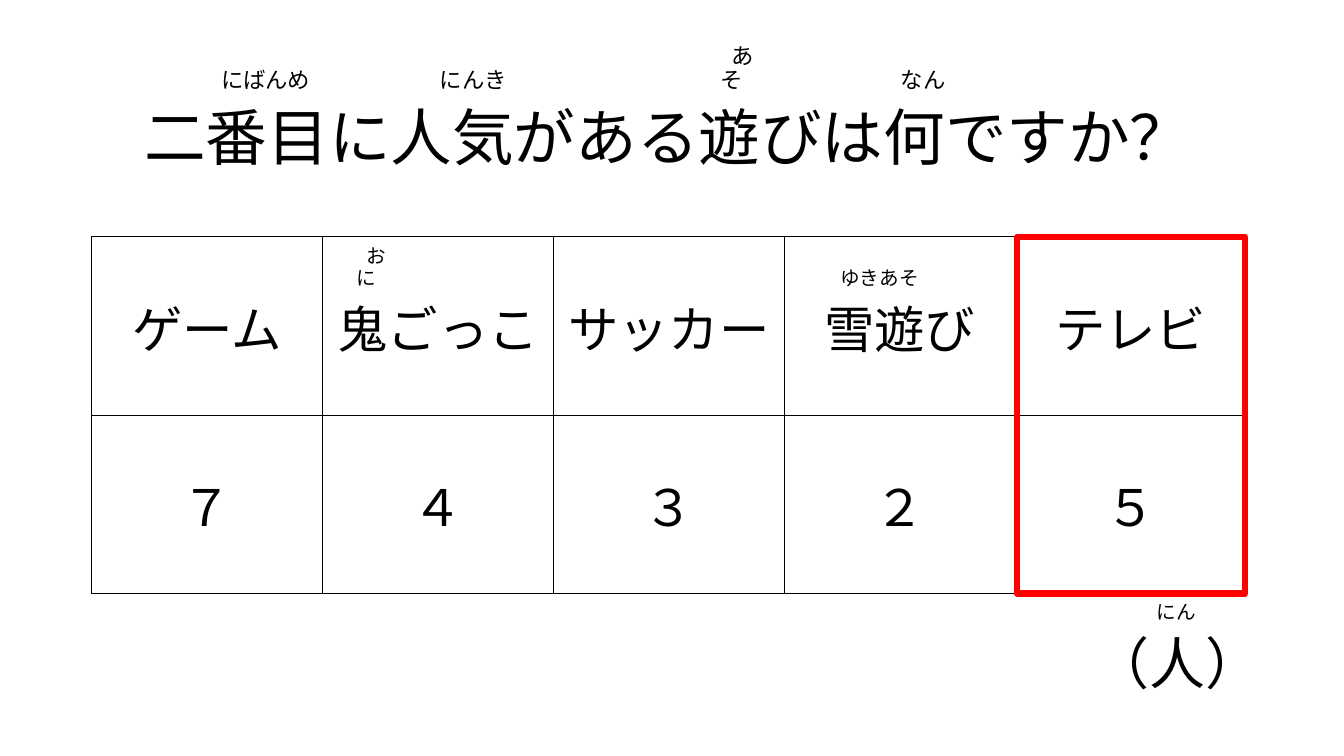
from lxml.etree import SubElement
from pptx import Presentation
from pptx.dml.color import RGBColor
from pptx.enum.shapes import MSO_SHAPE
from pptx.enum.text import MSO_ANCHOR, MSO_AUTO_SIZE, PP_ALIGN
from pptx.oxml import parse_xml
from pptx.oxml.ns import nsdecls, qn
from pptx.util import Inches, Pt

COLORS = {"ink": "000000", "mark": "FF0000"}
FONT = "Noto Sans CJK JP"
GAMES = ["ゲーム", "鬼ごっこ", "サッカー", "雪遊び", "テレビ"]
VOTES = ["７", "４", "３", "２", "５"]
LEFT, TOP, WIDE, HIGH = 0.91, 2.35, 2.29, 1.77


class Board:
    def __init__(self, slide):
        self.slide = slide
        self.shapes = slide.shapes

    def color(self, name):
        return RGBColor.from_string(COLORS[name])

    def style(self, frame, text, size):
        frame.text = text
        for para in frame.paragraphs:
            para.alignment = PP_ALIGN.CENTER
            for run in para.runs:
                run.font.size = Pt(size)
                run.font.name = FONT
                run.font.color.rgb = self.color("ink")
                asian = SubElement(run.font._element, qn("a:ea"))
                asian.set("typeface", FONT)

    def fill(self, shape, box, text, size, anchor):
        shape.left, shape.top, shape.width, shape.height = map(Inches, box)
        frame = shape.text_frame
        self.style(frame, text, size)
        frame.word_wrap = True
        frame.auto_size = MSO_AUTO_SIZE.NONE
        frame.vertical_anchor = anchor
        frame.paragraphs[0].line_spacing = 0.9

    def title(self, box, text, size):
        self.fill(self.shapes.title, box, text, size, MSO_ANCHOR.MIDDLE)

    def label(self, box, text, size, anchor=MSO_ANCHOR.BOTTOM):
        shape = self.shapes.add_textbox(*map(Inches, box))
        self.fill(shape, box, text, size, anchor)

    def border(self, cell):
        props = cell._tc.get_or_add_tcPr()
        for spot, side in enumerate("LRTB"):
            line = parse_xml(
                f'<a:ln{side} {nsdecls("a")} w="{Pt(1)}"><a:solidFill>'
                f'<a:srgbClr val="{COLORS["ink"]}"/></a:solidFill></a:ln{side}>'
            )
            props.insert(spot, line)

    def table(self, rows, size):
        count = len(rows[0])
        box = LEFT, TOP, WIDE * count, HIGH * len(rows)
        grid = self.shapes.add_table(len(rows), count, *map(Inches, box)).table
        grid.first_row = grid.horz_banding = False
        for col in grid.columns:
            col.width = Inches(WIDE)
        for y, row in enumerate(rows):
            grid.rows[y].height = Inches(HIGH)
            for x, text in enumerate(row):
                cell = grid.cell(y, x)
                cell.fill.background()
                cell.vertical_anchor = MSO_ANCHOR.MIDDLE
                self.style(cell.text_frame, text, size)
                self.border(cell)

    def frame(self, box):
        shape = self.shapes.add_shape(MSO_SHAPE.RECTANGLE, *map(Inches, box))
        shape.shadow.inherit = False
        shape.fill.background()
        shape.line.color.rgb = self.color("mark")
        shape.line.width = Pt(4.5)


def main():
    deck = Presentation()
    deck.slide_width, deck.slide_height = Inches(13.33), Inches(7.5)
    board = Board(deck.slides.add_slide(deck.slide_layouts[5]))
    board.title((0.88, 0.67, 11.5, 1.45), "二番目に人気がある遊びは何ですか？", 44)
    board.table([GAMES, VOTES], 36)
    board.frame((10.09, TOP, 2.26, HIGH * 2))
    board.label((10.64, 5.89, 2.07, 1.45), "（人）", 40, MSO_ANCHOR.MIDDLE)
    for box, text, size in [
        ((1.58, 0.48, 1.89, 0.5), "　にばんめ", 16),
        ((3.78, 0.61, 1.61, 0.37), "　にんき", 16),
        ((6.85, 0.61, 0.81, 0.37), "　あそ", 16),
        ((8.56, 0.61, 0.97, 0.37), "　なん", 16),
        ((3.27, 2.55, 0.73, 0.37), "　おに", 14),
        ((7.99, 2.55, 1.27, 0.37), "　ゆきあそ", 14),
        ((10.98, 5.55, 1.38, 0.69), "にん", 14),
    ]:
        board.label(box, text, size)
    deck.save("out.pptx")


if __name__ == "__main__":
    main()
